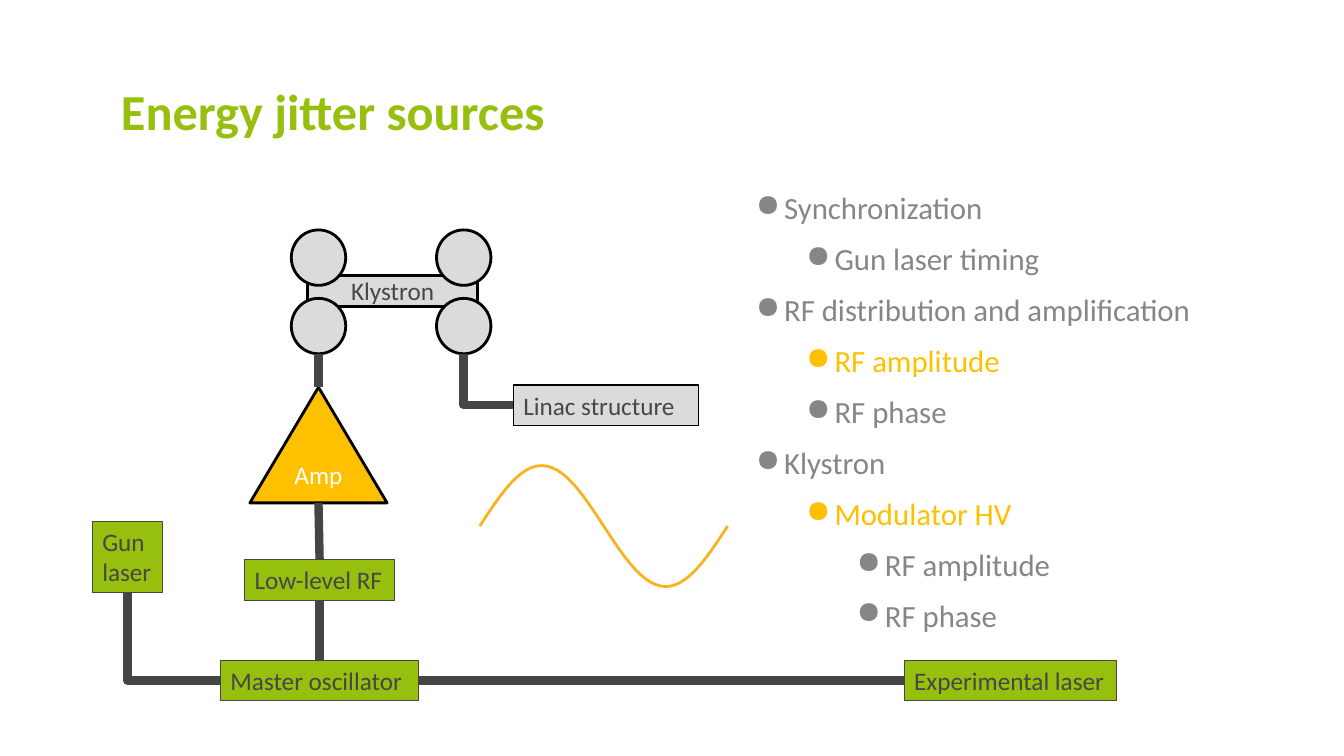
"""Build the slide on energy jitter sources."""
import math

from lxml import etree
from pptx import Presentation
from pptx.dml.color import RGBColor
from pptx.enum import shapes, text
from pptx.oxml import ns
from pptx.util import Pt

FONT = "Calibri"
GREEN = RGBColor(0x97, 0xBF, 0x0D)
AMBER = RGBColor(0xFF, 0xC0, 0x00)
WAVE = RGBColor(0xF8, 0xB3, 0x23)
SILVER = RGBColor(0xDB, 0xDB, 0xDB)
GRAY = RGBColor(0x86, 0x86, 0x89)
DARK = RGBColor(0x47, 0x47, 0x47)
WIRE = RGBColor(0x45, 0x45, 0x45)
BLACK = RGBColor(0, 0, 0)
WHITE = RGBColor(0xFF, 0xFF, 0xFF)

SOURCES = [
    (0, "Synchronization", GRAY),
    (1, "Gun laser timing", GRAY),
    (0, "RF distribution and amplification", GRAY),
    (1, "RF amplitude", AMBER),
    (1, "RF phase", GRAY),
    (0, "Klystron", GRAY),
    (1, "Modulator HV", AMBER),
    (2, "RF amplitude", GRAY),
    (2, "RF phase", GRAY),
]


def set_font(p, size, color, bold=False):
    """Format a whole paragraph."""
    f = p.font
    f.name, f.size, f.bold = FONT, Pt(size), bold
    f.color.rgb = color


def add_title(s, title):
    """Fill and place the title placeholder."""
    sp = s.shapes.title
    sp.left, sp.top, sp.width, sp.height = Pt(79.2), Pt(13.7), Pt(797), Pt(90)
    tf = sp.text_frame
    tf.text = title
    tf.auto_size = text.MSO_AUTO_SIZE.NONE
    tf.vertical_anchor = text.MSO_ANCHOR.BOTTOM
    p = tf.paragraphs[0]
    p.alignment = text.PP_ALIGN.LEFT
    set_font(p, 36, GREEN, bold=True)


def add_part(s, kind, box, fill, line=BLACK, weight=2):
    """Add a filled, outlined preset shape."""
    sp = s.shapes.add_shape(kind, *map(Pt, box))
    sp.shadow.inherit = False
    sp.fill.solid()
    sp.fill.fore_color.rgb = fill
    sp.line.color.rgb = line
    sp.line.width = Pt(weight)
    return sp


def write(sp, label, color=DARK, align=text.PP_ALIGN.CENTER,
          anchor=text.MSO_ANCHOR.MIDDLE, wrap=False):
    """Put a label inside a shape."""
    tf = sp.text_frame
    tf.text = label
    tf.word_wrap = wrap
    tf.vertical_anchor = anchor
    p = tf.paragraphs[0]
    p.alignment = align
    set_font(p, 18, color)


def add_block(s, label, box, fill=GREEN, line=DARK, weight=0.75, wrap=True):
    """Add a labelled block of the diagram."""
    sp = add_part(s, shapes.MSO_SHAPE.RECTANGLE, box, fill, line, weight)
    write(sp, label, align=text.PP_ALIGN.LEFT, anchor=text.MSO_ANCHOR.TOP, wrap=wrap)


def add_wire(s, x1, y1, x2, y2, bent=False):
    """Add a straight wire, or one that runs across and then turns once."""
    kind = shapes.MSO_CONNECTOR.ELBOW if bent else shapes.MSO_CONNECTOR.STRAIGHT
    c = s.shapes.add_connector(kind, Pt(x1), Pt(y1), Pt(x2), Pt(y2))
    c.line.color.rgb = WIRE
    c.line.width = Pt(6)
    props = c._element.spPr
    if bent:
        props.find(ns.qn("a:prstGeom")).set("prst", "bentConnector2")
    etree.SubElement(props, ns.qn("a:effectLst"))


def add_klystron(s):
    """Add the klystron body and its four cavities."""
    rect, oval = shapes.MSO_SHAPE.RECTANGLE, shapes.MSO_SHAPE.OVAL
    body = add_part(s, rect, (219.6, 196.6, 121.7, 22.3), SILVER)
    body.text_frame.margin_top = body.text_frame.margin_bottom = 0
    write(body, "Klystron")
    for x in (208.1, 311.8):
        for y in (164.2, 213.1):
            add_part(s, oval, (x, y, 38.9, 39.6), SILVER)


def add_wave(s, left, middle, width, height, steps=48):
    """Draw one period of a sine wave."""
    points = [(Pt(left + width * i / steps),
               Pt(middle - height / 2 * math.sin(math.tau * i / steps)))
              for i in range(steps + 1)]
    fb = s.shapes.build_freeform(*points[0])
    fb.add_line_segments(points[1:], close=False)
    sp = fb.convert_to_shape()
    sp.shadow.inherit = False
    sp.fill.background()
    sp.line.color.rgb = WAVE
    sp.line.width = Pt(2)


def add_list(s, items, box):
    """Add the indented bullet list."""
    tf = s.shapes.add_textbox(*map(Pt, box)).text_frame
    tf.word_wrap = True
    for i, (level, label, color) in enumerate(items):
        p = tf.add_paragraph() if i else tf.paragraphs[0]
        p.text = label
        p.level = level
        p.space_before = Pt(10 if i else 0)
        props = p._p.get_or_add_pPr()
        props.set("marL", str(Pt(20.25 + 36 * level)))
        props.set("indent", str(-Pt(20.25)))
        etree.SubElement(props, ns.qn("a:buChar")).set("char", "●")
        set_font(p, 22, color)


def main():
    """Build and save the slide."""
    prs = Presentation()
    prs.slide_width, prs.slide_height = Pt(960), Pt(540)
    s = prs.slides.add_slide(prs.slide_layouts[5])
    add_title(s, "Energy jitter sources")

    add_block(s, "Master oscillator", (157.5, 471.6, 141.3, 29.1))
    add_block(s, "Experimental laser", (645.9, 471.6, 151.8, 29.1), wrap=False)
    add_block(s, "Gun laser", (66, 372.3, 50, 51))
    add_block(s, "Low-level RF", (174.8, 399.7, 107.2, 29.1), wrap=False)
    add_block(s, "Linac structure", (366.7, 275, 132.4, 29.1), SILVER, BLACK, 1)
    add_list(s, SOURCES, (532.8, 131.2, 427, 329))

    amp = add_part(s, shapes.MSO_SHAPE.ISOSCELES_TRIANGLE,
                   (178.5, 276.6, 98, 82.6), AMBER)
    write(amp, "Amp", WHITE)
    add_klystron(s)

    add_wire(s, 228.3, 399.7, 227.5, 359.2)
    add_wire(s, 227.5, 276.6, 227.5, 252.7)
    add_wire(s, 298.8, 486.2, 645.9, 486.2)
    add_wire(s, 228.3, 471.6, 228.3, 428.8)
    add_wire(s, 157.5, 486.2, 91, 423.3, bent=True)
    add_wire(s, 366.7, 289.5, 331.2, 252.7, bent=True)
    add_wave(s, 342.7, 375.8, 177.1, 86.4)
    prs.save("out.pptx")


if __name__ == "__main__":
    main()
